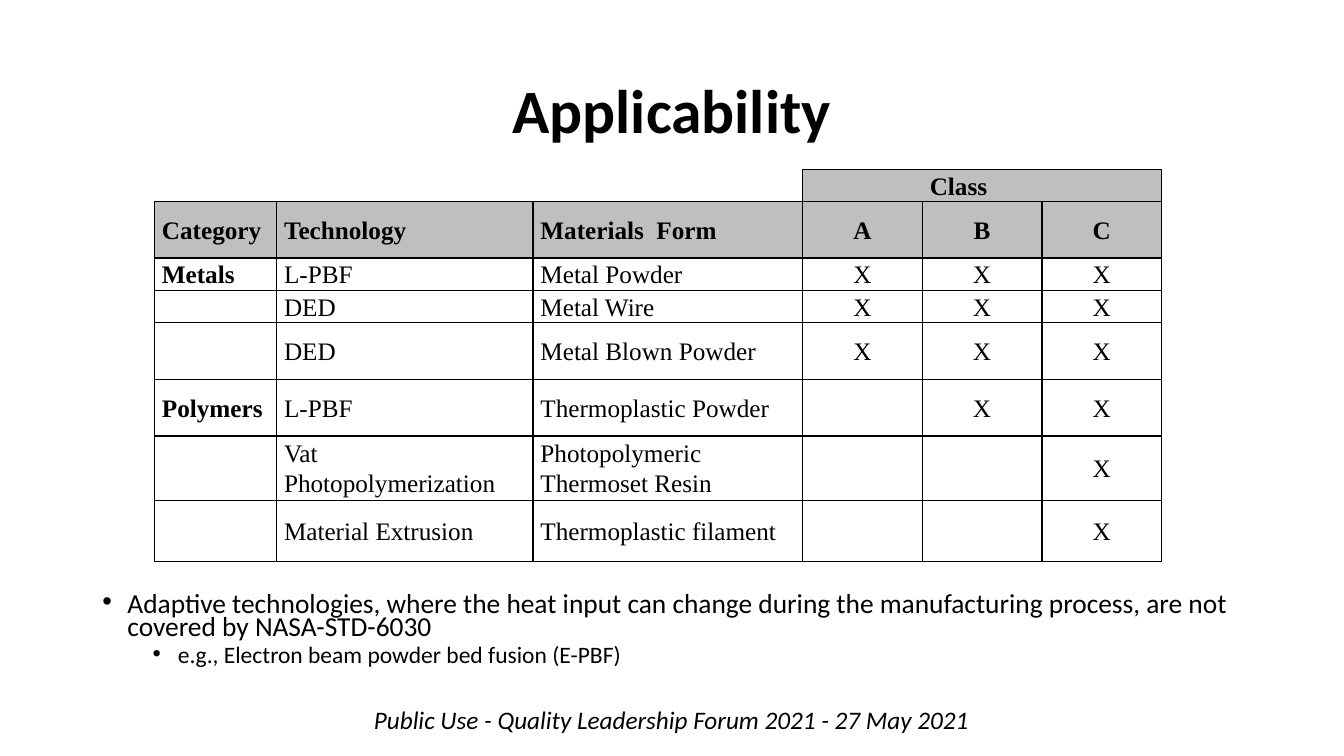
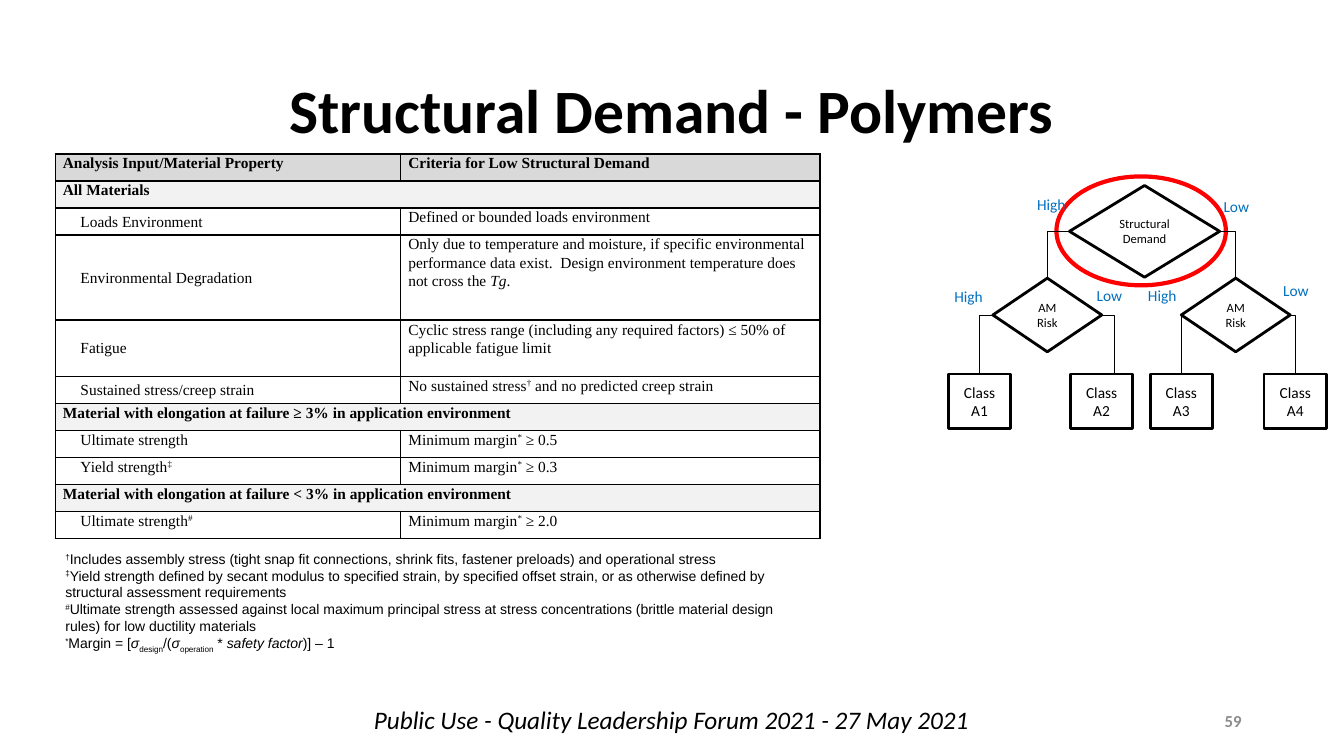
from lxml.etree import SubElement
from pptx import Presentation
from pptx.dml.color import RGBColor
from pptx.enum.shapes import MSO_CONNECTOR, MSO_SHAPE
from pptx.enum.text import MSO_ANCHOR, MSO_AUTO_SIZE, PP_ALIGN
from pptx.oxml.ns import qn
from pptx.util import Pt

BLACK = RGBColor(0x00, 0x00, 0x00)
GRAY = RGBColor(0x8C, 0x8C, 0x8C)
BLUE = RGBColor(0x00, 0x70, 0xC0)
RED = RGBColor(0xFF, 0x00, 0x00)
HEADER_FILL = RGBColor(0xBF, 0xBF, 0xBF)
CRITERIA_FILL = RGBColor(0xD9, 0xD9, 0xD9)
SECTION_FILL = RGBColor(0xF2, 0xF2, 0xF2)

BODY_FONT = "Calibri"
TABLE_FONT = "Times New Roman"
NOTE_FONT = "Arial"
CENTER = PP_ALIGN.CENTER
MIDDLE = MSO_ANCHOR.MIDDLE
BASELINES = {"sup": "30000", "sub": "-30000"}


def write(frame, lines, size, name=BODY_FONT, color=BLACK, bold=False, italic=False,
          align=PP_ALIGN.LEFT, spacing=None, anchor=MSO_ANCHOR.TOP, wrap=True):
    """Fill a frame; a line is a string or a list of (text, style) spans."""
    frame.word_wrap = wrap
    frame.vertical_anchor = anchor
    if not wrap:
        frame.auto_size = MSO_AUTO_SIZE.SHAPE_TO_FIT_TEXT
    for number, line in enumerate(lines):
        para = frame.add_paragraph() if number else frame.paragraphs[0]
        para.alignment = align
        para.line_spacing = spacing
        font = para.font
        font.size, font.name, font.bold, font.italic = Pt(size), name, bold, italic
        font.color.rgb = color
        for text, style in [(line, "")] if isinstance(line, str) else line:
            span = para.add_run()
            span.text = text
            if style == "italic":
                span.font.italic = True
            elif style:
                span._r.get_or_add_rPr().set("baseline", BASELINES[style])


def format_cell(cell, fill=None, edges="LRTB"):
    """Set the margins, the black borders on the named edges, and the fill."""
    cell.margin_left = cell.margin_right = Pt(5.4)
    cell.margin_top = cell.margin_bottom = 0
    properties = cell._tc.get_or_add_tcPr()
    for edge in "LRTB":
        border = SubElement(properties, qn(f"a:ln{edge}"), w=str(Pt(1)))
        if edge in edges:
            paint = SubElement(border, qn("a:solidFill"))
            SubElement(paint, qn("a:srgbClr"), val=str(BLACK))
        else:
            SubElement(border, qn("a:noFill"))
    if fill is None:
        cell.fill.background()
    else:
        cell.fill.solid()
        cell.fill.fore_color.rgb = fill


deck = Presentation()
deck.slide_width, deck.slide_height = Pt(960), Pt(540)
pages = []
for title in ("Applicability", "Structural Demand - Polymers"):
    page = deck.slides.add_slide(deck.slide_layouts[6])
    pages.append(page)
    box = page.shapes.add_textbox(Pt(66), Pt(28.8), Pt(828), Pt(104.4))
    write(box.text_frame, [title], 44, bold=True, align=CENTER, spacing=0.9, anchor=MIDDLE)
    box = page.shapes.add_textbox(Pt(260), Pt(499.8), Pt(440), Pt(29))
    write(box.text_frame, ["Public Use - Quality Leadership Forum 2021 - 27 May 2021"],
          18, italic=True, wrap=False)
applicability, demand = pages

# Applicability: technologies by class
rows = [
    ("", "", "", "", "Class", ""),
    ("Category", "Technology", "Materials  Form", "A", "B", "C"),
    ("Metals", "L-PBF", "Metal Powder", "X", "X", "X"),
    ("", "DED", "Metal Wire", "X", "X", "X"),
    ("", "DED", "Metal Blown Powder", "X", "X", "X"),
    ("Polymers", "L-PBF", "Thermoplastic Powder", "", "X", "X"),
    ("", "Vat Photopolymerization", "Photopolymeric Thermoset Resin", "", "", "X"),
    ("", "Material Extrusion", "Thermoplastic filament", "", "", "X"),
]
top_edges = ["B", "B", "RB", "LTB", "TB", "RTB"]
widths = [87.2, 183.2, 192.6, 85.5, 85.5, 85.5]
heights = [22, 40.2, 21.8, 21.8, 40.4, 40.4, 43.4, 43.4]
table = applicability.shapes.add_table(
    len(rows), len(widths), Pt(110.3), Pt(121), Pt(sum(widths)), Pt(sum(heights))).table
table.first_row = table.horz_banding = False
for column, width in zip(table.columns, widths):
    column.width = Pt(width)
for i, (texts, height) in enumerate(zip(rows, heights)):
    table.rows[i].height = Pt(height)
    for j, text in enumerate(texts):
        shaded = i == 1 or (i == 0 and j > 2)
        cell = table.cell(i, j)
        format_cell(cell, HEADER_FILL if shaded else None, "LRTB" if i else top_edges[j])
        if text:
            write(cell.text_frame, [text], 18, TABLE_FONT, bold=i < 2 or j == 0,
                  align=CENTER if i and j > 2 else PP_ALIGN.LEFT, spacing=1.07)
            cell.vertical_anchor = MIDDLE

box = applicability.shapes.add_textbox(Pt(66), Pt(421.2), Pt(828), Pt(64.8))
bullets = [
    ("Adaptive technologies, where the heat input can change during the manufacturing "
     "process, are not covered by NASA-STD-6030", 19.6, 18),
    ("e.g., Electron beam powder bed fusion (E-PBF)", 16.8, 54),
]
for level, (text, size, indent) in enumerate(bullets):
    para = box.text_frame.add_paragraph() if level else box.text_frame.paragraphs[0]
    para.level = level
    para.line_spacing = 0.7
    if level:
        para.space_before = Pt(5)
    properties = para._p.get_or_add_pPr()
    properties.set("marL", str(Pt(indent)))
    properties.set("indent", str(Pt(-18)))
    SubElement(properties, qn("a:buFont"), typeface=NOTE_FONT)
    SubElement(properties, qn("a:buChar"), char="•")
    para.font.size, para.font.name = Pt(size), BODY_FONT
    para.font.color.rgb = BLACK
    para.add_run().text = text
box.text_frame.word_wrap = True

# Structural demand: decision tree
box = demand.shapes.add_textbox(Pt(678), Pt(500.4), Pt(216), Pt(28.8))
write(box.text_frame, ["59"], 12, color=GRAY, bold=True, align=PP_ALIGN.RIGHT, anchor=MIDDLE)

DECISION, PROCESS = MSO_SHAPE.FLOWCHART_DECISION, MSO_SHAPE.FLOWCHART_PROCESS
nodes = {}
for key, kind, lines, size, place in [
    ("demand", DECISION, ["Structural Demand"], 9, (763.9, 132.5, 107.3, 65.5)),
    ("left risk", DECISION, ["AM Risk"], 9, (709.2, 198.7, 77.8, 52.6)),
    ("right risk", DECISION, ["AM Risk"], 9, (843.8, 198.7, 77.8, 52.6)),
    ("A1", PROCESS, ["Class", "A1"], 11, (677.4, 267.1, 44.6, 38.9)),
    ("A2", PROCESS, ["Class", "A2"], 11, (764.6, 267.1, 44.6, 38.9)),
    ("A3", PROCESS, ["Class", "A3"], 11, (821.5, 267.1, 44.6, 38.9)),
    ("A4", PROCESS, ["Class", "A4"], 11, (902.9, 267.1, 44.6, 38.9)),
    ("highlight", MSO_SHAPE.OVAL, [], 9, (754.6, 126, 121, 77.8)),
]:
    node = demand.shapes.add_shape(kind, *map(Pt, place))
    node.shadow.inherit = False
    node.fill.background()
    node.line.color.rgb = BLACK if lines else RED
    node.line.width = Pt(2 if lines else 3)
    write(node.text_frame, lines, size, align=CENTER, anchor=MIDDLE)
    nodes[key] = node

LEFT, RIGHT = 1, 3
for source, side, target, shift in [
    ("demand", LEFT, "left risk", 0),
    ("demand", RIGHT, "right risk", 0),
    ("left risk", LEFT, "A1", 0),
    ("left risk", RIGHT, "A2", 9.4),
    ("right risk", LEFT, "A3", 0),
    ("right risk", RIGHT, "A4", 0),
]:
    start, end = nodes[source], nodes[target]
    straight = target == "A3"
    link = demand.shapes.add_connector(
        MSO_CONNECTOR.STRAIGHT if straight else MSO_CONNECTOR.ELBOW,
        start.left, start.top, end.left + end.width // 2 + Pt(shift), end.top)
    link.begin_connect(start, side)
    if not shift:
        link.end_connect(end, 0)
    properties = link._element.spPr
    if not straight:
        properties.find(qn("a:prstGeom")).set("prst", "bentConnector2")
    link.line.color.rgb = BLACK
    link.line.width = Pt(0.5)
    SubElement(properties, qn("a:effectLst"))

for text, width, spots in [
    ("High", 35.3, [(733.7, 136.1), (674.6, 201.6), (812.9, 200.9)]),
    ("Low", 33.1, [(866.9, 137.5), (776.2, 200.9), (909.4, 197.3)]),
]:
    for left, top in spots:
        box = demand.shapes.add_textbox(Pt(left), Pt(top), Pt(width), Pt(20.9))
        write(box.text_frame, [text], 11, color=BLUE, wrap=False)

# Structural demand: criteria
criteria = [
    ("Analysis Input/Material Property", "Criteria for Low Structural Demand"),
    ("All Materials", None),
    ("Loads Environment", "Defined or bounded loads environment"),
    ("Environmental Degradation", [
        ("Only due to temperature and moisture, if specific environmental performance data "
         "exist.  Design environment temperature does not cross the ", ""),
        ("Tg", "italic"), (".", "")]),
    ("Fatigue", "Cyclic stress range (including any required factors) ≤ 50% of "
                "applicable fatigue limit"),
    ("Sustained stress/creep strain", [
        ("No sustained stress", ""), ("†", "sup"), (" and no predicted creep strain", "")]),
    ("Material with elongation at failure ≥ 3% in application environment", None),
    ("Ultimate strength", [("Minimum margin", ""), ("*", "sup"), (" ≥ 0.5", "")]),
    ([("Yield strength", ""), ("‡", "sup")],
     [("Minimum margin", ""), ("*", "sup"), (" ≥ 0.3", "")]),
    ("Material with elongation at failure < 3% in application environment", None),
    ([("Ultimate strength", ""), ("#", "sup")],
     [("Minimum margin", ""), ("*", "sup"), (" ≥ 2.0", "")]),
]
heights = [19.3] * 3 + [60.8, 40.2] + [19.3] * 6
table = demand.shapes.add_table(
    len(criteria), 2, Pt(39.5), Pt(110), Pt(546.2), Pt(sum(heights))).table
table.first_row = table.horz_banding = False
table.columns[0].width, table.columns[1].width = Pt(246.8), Pt(299.4)
for i, (texts, height) in enumerate(zip(criteria, heights)):
    table.rows[i].height = Pt(height)
    section = texts[1] is None
    fill = CRITERIA_FILL if i == 0 else SECTION_FILL if section else None
    for j, text in enumerate(texts):
        cell = table.cell(i, j)
        format_cell(cell, fill)
        if text:
            write(cell.text_frame, [text], 11, TABLE_FONT, bold=fill is not None, spacing=1.07)
            cell.vertical_anchor = MIDDLE if j == 0 and 2 <= i <= 5 else MSO_ANCHOR.TOP
        if j == 0 and fill is None:
            cell.text_frame.paragraphs[0]._p.get_or_add_pPr().set("marL", str(Pt(12.6)))
    if section:
        table.cell(i, 0).merge(table.cell(i, 1))

box = demand.shapes.add_textbox(Pt(39.6), Pt(390.2), Pt(546.5), Pt(80))
write(box.text_frame, [
    [("†", "sup"), ("Includes assembly stress (tight snap fit connections, shrink fits, "
                    "fastener preloads) and operational stress", "")],
    [("‡", "sup"), ("Yield strength defined by secant modulus to specified strain, by specified "
                    "offset strain, or as otherwise defined by structural assessment "
                    "requirements", "")],
    [("#", "sup"), ("Ultimate strength assessed against local maximum principal stress at stress "
                    "concentrations (brittle material design rules) for low ductility "
                    "materials", "")],
    [("*", "sup"), ("Margin = [", ""), ("σ", "italic"), ("design", "sub"), ("/(", ""),
     ("σ", "italic"), ("operation", "sub"), (" * ", ""), ("safety factor", "italic"),
     (")] – 1", "")],
], 10, NOTE_FONT, anchor=MIDDLE)

deck.save("out.pptx")
